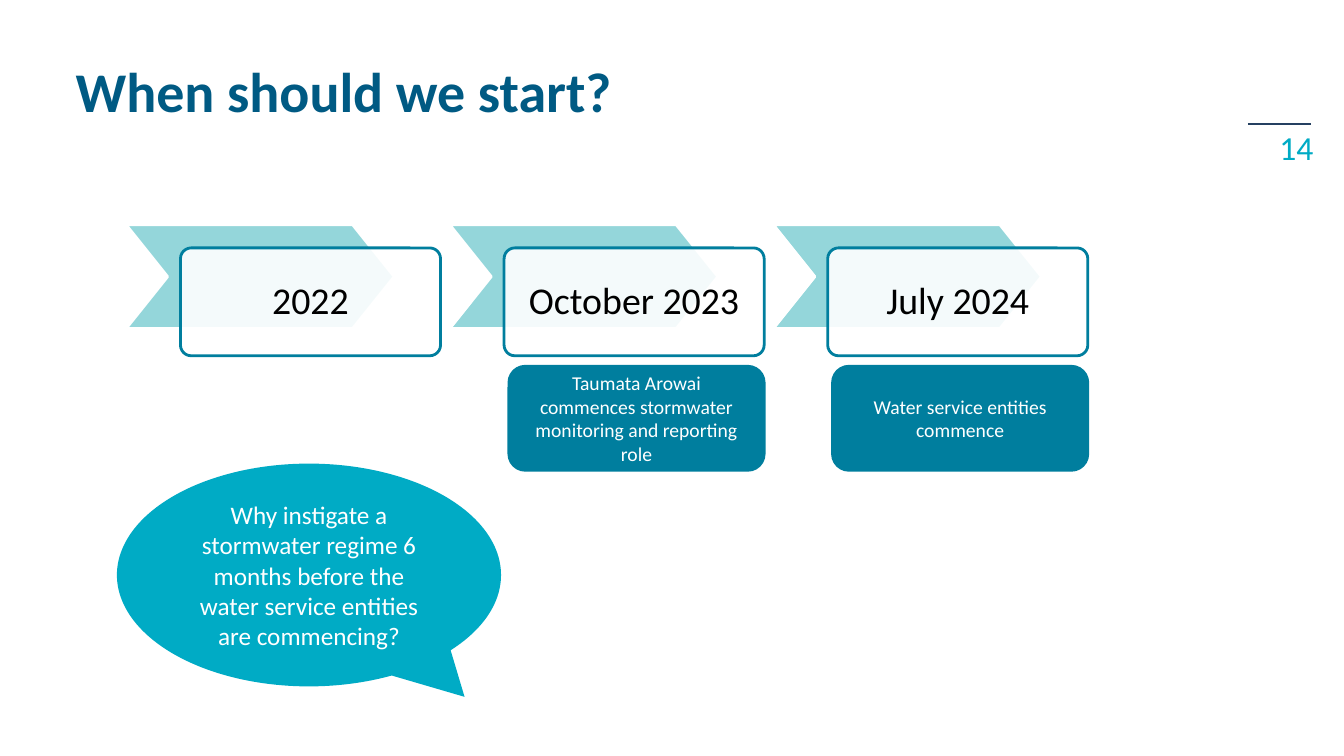
from lxml import etree
from pptx import Presentation
from pptx.dml.color import RGBColor
from pptx.enum.shapes import MSO_CONNECTOR, MSO_SHAPE
from pptx.enum.text import MSO_ANCHOR, PP_ALIGN
from pptx.oxml.ns import qn
from pptx.util import Inches, Pt

NAVY = RGBColor(0x00, 0x5A, 0x83)
RULE_BLUE = RGBColor(0x25, 0x40, 0x61)
CYAN = RGBColor(0x00, 0xAB, 0xC5)
TEAL = RGBColor(0x00, 0x7E, 0x9E)
PALE_TEAL = RGBColor(0x94, 0xD6, 0xDA)
WHITE = RGBColor(0xFF, 0xFF, 0xFF)
BLACK = RGBColor(0x00, 0x00, 0x00)

LEFT, CENTER, RIGHT = PP_ALIGN.LEFT, PP_ALIGN.CENTER, PP_ALIGN.RIGHT
TOP, MIDDLE = MSO_ANCHOR.TOP, MSO_ANCHOR.MIDDLE
CHEVRON, ROUNDED = MSO_SHAPE.CHEVRON, MSO_SHAPE.ROUNDED_RECTANGLE
CALLOUT, STRAIGHT = MSO_SHAPE.OVAL_CALLOUT, MSO_CONNECTOR.STRAIGHT
TITLE_ONLY = 5


class TimelineSlide:
    """Places elements on a grid of 100 columns by 100 rows."""

    font_name = "Calibri"

    def __init__(self, deck):
        self.column = deck.slide_width / 100
        self.row = deck.slide_height / 100
        self.slide = deck.slides.add_slide(deck.slide_layouts[TITLE_ONLY])

    def place(self, x, y, width, height):
        return (round(x * self.column), round(y * self.row),
                round(width * self.column), round(height * self.row))

    def set_text(self, frame, text, size, color, align=CENTER, anchor=MIDDLE,
                 insets=(0.1, 0.05), bold=False, spacing=None):
        side, edge = (Inches(inset) for inset in insets)
        frame_format = {"word_wrap": True, "vertical_anchor": anchor,
                        "margin_left": side, "margin_right": side,
                        "margin_top": edge, "margin_bottom": edge}
        for name, value in frame_format.items():
            setattr(frame, name, value)
        paragraph = frame.paragraphs[0]
        paragraph.text = text
        paragraph_format = {"alignment": align, "line_spacing": spacing,
                            "space_before": Pt(0)}
        for name, value in paragraph_format.items():
            setattr(paragraph, name, value)
        font = paragraph.runs[0].font
        font_format = {"name": self.font_name, "size": Pt(size), "bold": bold}
        for name, value in font_format.items():
            setattr(font, name, value)
        font.color.rgb = color

    def title(self, box, text, **style):
        heading = self.slide.shapes.title
        sides = ("left", "top", "width", "height")
        for name, value in zip(sides, self.place(*box)):
            setattr(heading, name, value)
        self.set_text(heading.text_frame, text, **style)

    def label(self, box, text, **style):
        textbox = self.slide.shapes.add_textbox(*self.place(*box))
        self.set_text(textbox.text_frame, text, **style)

    def rule(self, start, end, y, color):
        x, top, length, _ = self.place(start, y, end - start, 0)
        line = self.slide.shapes.add_connector(STRAIGHT, x, top, x + length, top)
        line.line.color.rgb = color
        line.line.width = Pt(1)
        etree.SubElement(line._element.spPr, qn("a:effectLst"))

    def shape(self, kind, box, fill, line=None, adjustments=(), opacity=None):
        block = self.slide.shapes.add_shape(kind, *self.place(*box))
        block.shadow.inherit = False
        block.fill.solid()
        block.fill.fore_color.rgb = fill
        for index, value in enumerate(adjustments):
            block.adjustments[index] = value
        if opacity is not None:
            color = block._element.spPr.find(qn("a:solidFill"))[0]
            etree.SubElement(color, qn("a:alpha"), val=str(opacity * 1000))
        if line is None:
            block.line.fill.background()
        else:
            block.line.color.rgb = line
            block.line.width = Pt(2)
        return block.text_frame


def main():
    deck = Presentation()
    deck.slide_width, deck.slide_height = Inches(13.33), Inches(7.5)
    page = TimelineSlide(deck)

    # Heading and page number
    page.title((5.63, 7.33, 79.43, 9.2), "When should we start?", size=40,
               color=NAVY, align=LEFT, anchor=TOP, insets=(0, 0.01), bold=True)
    page.rule(92.85, 97.58, 16.4, RULE_BLUE)
    page.label((90.6, 16.7, 7.13, 5.73), "14", size=24, color=CYAN,
               align=RIGHT, anchor=TOP, insets=(0, 0.01))

    # Question in the speech bubble
    question = page.shape(CALLOUT, (8.7, 61.33, 28.58, 29.47), CYAN,
                          adjustments=(0.405, 0.547))
    page.set_text(question, "Why instigate a stormwater regime 6 months before "
                  "the water service entities are commencing?", 18, WHITE)

    # Timeline: arrow, date and, where there is one, its event
    milestones = [
        ("2022", None),
        ("October 2023", "Taumata Arowai commences stormwater "
                         "monitoring and reporting role"),
        ("July 2024", "Water service entities commence"),
    ]
    step = 24.08
    for index, (date, event) in enumerate(milestones):
        shift = index * step
        page.shape(CHEVRON, (9.38 + shift, 29.73, 19.95, 13.73), PALE_TEAL,
                   line=WHITE, adjustments=(0.4,))
        date_card = page.shape(ROUNDED, (13.43 + shift, 32.8, 19.35, 14.27),
                               WHITE, line=TEAL, adjustments=(0.1,), opacity=90)
        page.set_text(date_card, date, 27, BLACK, insets=(0.2, 0.2), spacing=0.9)
        if event:
            event_card = page.shape(
                ROUNDED, (13.68 + shift, 48.27, 19.2, 14.13), TEAL)
            page.set_text(event_card, event, 14, WHITE)

    deck.save("out.pptx")


if __name__ == "__main__":
    main()
